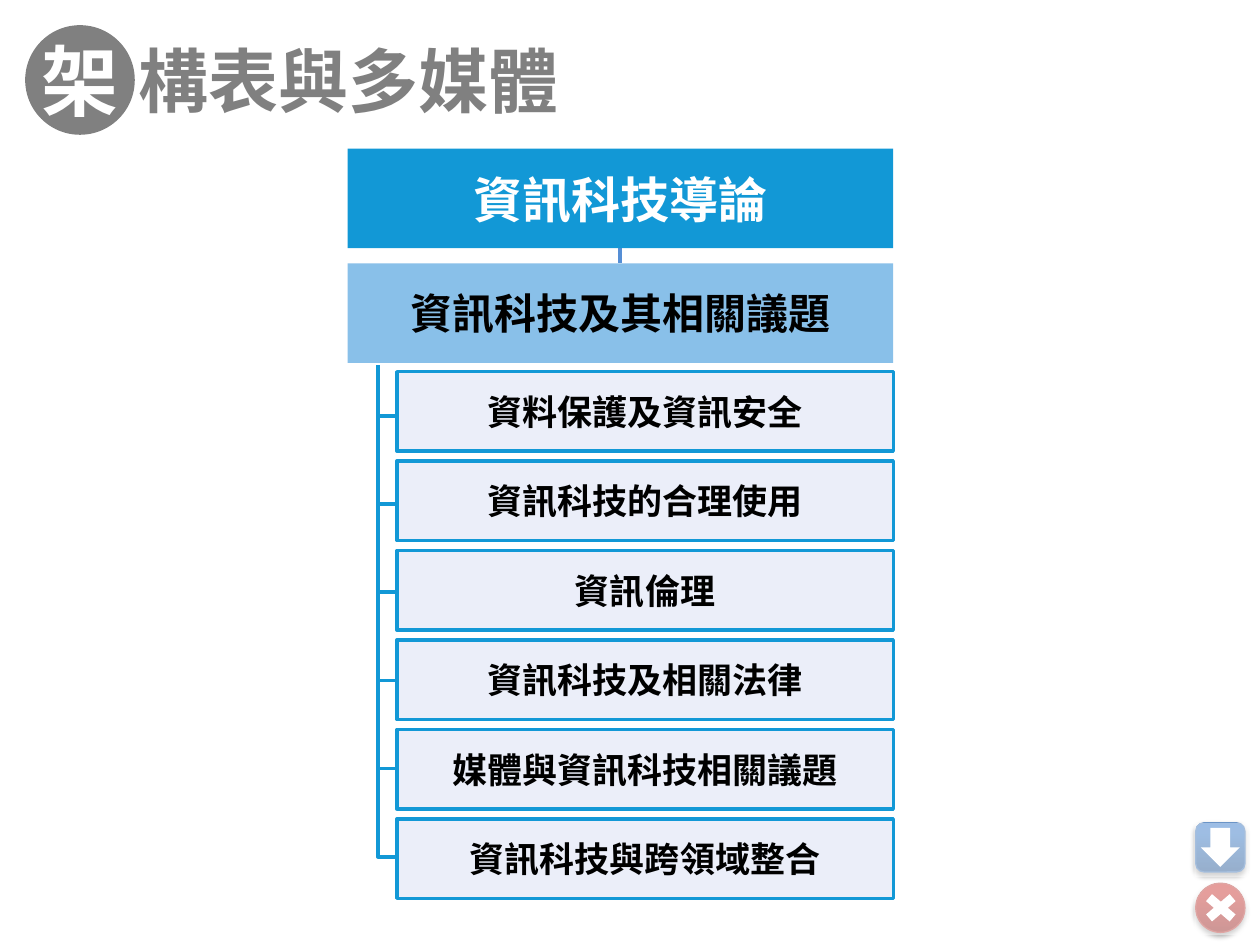
"""Build the structure-chart slide for the information technology course."""
from lxml import etree
from pptx import Presentation, util as u
from pptx.dml.color import RGBColor
from pptx.enum import shapes, text
from pptx.oxml import ns

KIND = shapes.MSO_SHAPE
CJK = "Noto Sans CJK SC"
BLUE = "1298D6"
TOPICS = ["資料保護及資訊安全", "資訊科技的合理使用", "資訊倫理",
          "資訊科技及相關法律", "媒體與資訊科技相關議題", "資訊科技與跨領域整合"]
BUTTONS = [
    (KIND.ROUNDED_RECTANGLE, 65.3, ("2F5F99", "3D7CC7", "3A7CCB"), "4B7EBC",
     KIND.DOWN_ARROW, (95.3, 65.7, 3.1, 3.1)),
    (KIND.OVAL, 70.1, ("9C2F2D", "CB3E3A", "CE3B37"), "BF4C48",
     KIND.MATH_MULTIPLY, (95.1, 70.5, 3.6, 3.1)),
]

deck = Presentation()
deck.slide_width, deck.slide_height = u.Inches(10), u.Inches(7.5)
unit = deck.slide_width / 100
page = deck.slides.add_slide(deck.slide_layouts[6])


def add_block(kind, area, fill=None, line=None, width=2):
    """Add a flat shape on the grid of hundredths of the slide width."""
    box = page.shapes.add_shape(kind, *[round(n * unit) for n in area])
    box.shadow.inherit = False
    if fill:
        box.fill.solid()
        box.fill.fore_color.rgb = RGBColor.from_string(fill)
    else:
        box.fill.background()
    if line:
        box.line.color.rgb = RGBColor.from_string(line)
        box.line.width = u.Pt(width)
    else:
        box.line.fill.background()
    return box


def write(box, words, size, color, font=CJK, align=text.PP_ALIGN.CENTER, wrap=False):
    """Put one bold run in a box, with the same look for Chinese glyphs."""
    frame = box.text_frame
    frame.word_wrap = wrap
    frame.vertical_anchor = text.MSO_ANCHOR.MIDDLE
    para = frame.paragraphs[0]
    para.alignment = align
    span = para.add_run()
    span.text = words
    span.font.size, span.font.bold, span.font.name = u.Pt(size), True, font
    span.font.color.rgb = RGBColor.from_string(color)
    etree.SubElement(span.font._element, ns.qn("a:ea"), typeface=CJK)


for kind, top, colors, edge, icon, icon_area in BUTTONS:
    button = add_block(kind, (94.9, top, 3.9, 3.9), None, edge, 0.75)
    props = button._element.spPr
    props.remove(props.find(ns.qn("a:noFill")))
    gradient = etree.Element(ns.qn("a:gradFill"), rotWithShape="1")
    stops = etree.SubElement(gradient, ns.qn("a:gsLst"))
    for place, color in zip((0, 80, 100), colors):
        stop = etree.SubElement(stops, ns.qn("a:gs"), pos=str(place * 1000))
        etree.SubElement(stop, ns.qn("a:srgbClr"), val=color)
    etree.SubElement(gradient, ns.qn("a:lin"), ang=str(270 * 60000), scaled="0")
    props.find(ns.qn("a:prstGeom")).addnext(gradient)
    shadow = etree.SubElement(
        props.find(ns.qn("a:effectLst")), ns.qn("a:outerShdw"), blurRad=str(u.Pt(3.1)),
        dist=str(u.Pt(1.8)), dir=str(90 * 60000), rotWithShape="0")
    tint = etree.SubElement(shadow, ns.qn("a:srgbClr"), val="000000")
    etree.SubElement(tint, ns.qn("a:alpha"), val="35000")
    add_block(icon, icon_area, "FFFFFF")

for top in (65.3, 69.9):
    veil = add_block(KIND.RECTANGLE, (94.8, top, 4.3, 4.3), "FFFFFF")
    tint = veil._element.spPr.find(ns.qn("a:solidFill"))[0]
    etree.SubElement(tint, ns.qn("a:alpha"), val="50000")

badge = add_block(KIND.OVAL, (2, 2, 8.7, 8.7), "808080")
write(badge, "架", 44, "FFFFFF")
title = page.shapes.add_textbox(*[round(n * unit) for n in (9.8, 2, 39.4, 8.7)])
title.text_frame.margin_left = title.text_frame.margin_right = u.Inches(0.12)
title.text_frame.margin_top = title.text_frame.margin_bottom = u.Inches(0.04)
write(title, "構表與多媒體", 40, "808080", align=text.PP_ALIGN.LEFT, wrap=True)

subject = add_block(KIND.RECTANGLE, (27.6, 20.9, 43.3, 7.9), "89C0E9")
write(subject, "資訊科技及其相關議題", 24, "000000", "Times New Roman")
link = page.shapes.add_connector(
    shapes.MSO_CONNECTOR.STRAIGHT, *[round(n * unit) for n in (49.2, 19.7, 49.2, 20.9)])
link.line.color.rgb = RGBColor.from_string("558ED5")
link.line.width = u.Pt(2)
etree.SubElement(link._element.spPr, ns.qn("a:effectLst"))
course = add_block(KIND.RECTANGLE, (27.6, 11.8, 43.3, 7.9), BLUE)
write(course, "資訊科技導論", 28, "FFFFFF")

for row, topic in enumerate(TOPICS):
    top = 29.5 + row * 7.1
    middle = top + 3.15
    builder = page.shapes.build_freeform(29.5, 28.7, scale=unit)
    builder.add_line_segments([(29.5, middle), (31.5, middle)], close=False)
    branch = builder.convert_to_shape()
    branch.shadow.inherit = False
    branch.fill.background()
    branch.line.color.rgb = RGBColor.from_string(BLUE)
    branch.line.width = u.Pt(2)
    leaf = add_block(KIND.RECTANGLE, (31.5, top, 39.4, 6.3), "EBEEF9", BLUE)
    write(leaf, topic, 20, "000000", "Roboto")

deck.save("out.pptx")
